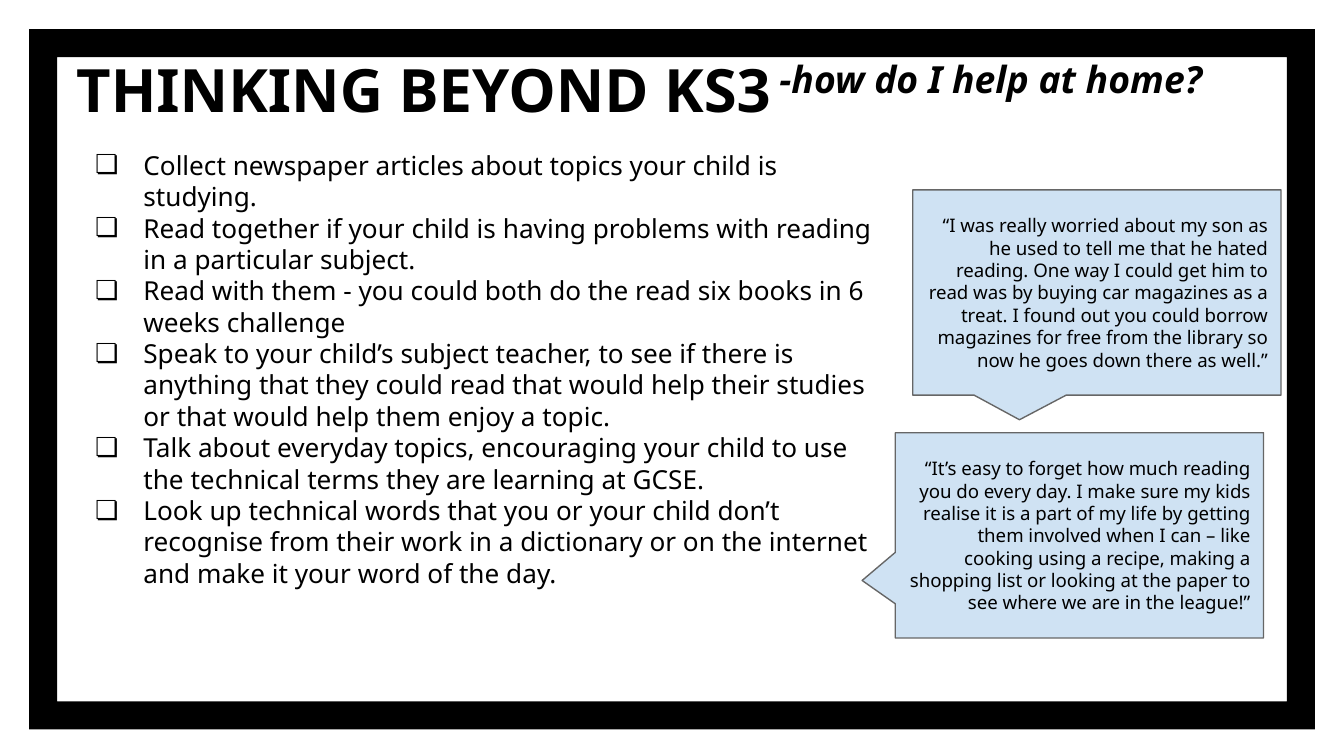
from dataclasses import dataclass

from lxml import etree
from pptx import Presentation
from pptx.dml.color import RGBColor
from pptx.enum.shapes import MSO_SHAPE
from pptx.enum.text import MSO_ANCHOR, MSO_AUTO_SIZE, PP_ALIGN
from pptx.oxml.ns import qn
from pptx.util import Cm, Pt

BLACK = RGBColor(0x00, 0x00, 0x00)
PALE_BLUE = RGBColor(0xCF, 0xE2, 0xF3)
GREY = RGBColor(0x66, 0x66, 0x66)

FRAME = MSO_SHAPE.FRAME
CALLOUT = MSO_SHAPE.ROUNDED_RECTANGULAR_CALLOUT
LEFT, RIGHT = PP_ALIGN.LEFT, PP_ALIGN.RIGHT
TOP, MIDDLE, BOTTOM = MSO_ANCHOR.TOP, MSO_ANCHOR.MIDDLE, MSO_ANCHOR.BOTTOM
NO_AUTOFIT = MSO_AUTO_SIZE.NONE

FONT = "Noto Sans"
LINE_HEIGHT = 1.2
INSET = Cm(0.25)
TWO_CONTENT_LAYOUT = 3


@dataclass
class Box:
    """Position and size in centimetres."""
    left: float
    top: float
    width: float
    height: float


@dataclass
class TextStyle:
    size: int
    align: int = LEFT
    anchor: int = TOP
    bold: bool = False
    italic: bool = False
    bullet: str = ""


@dataclass
class Quote:
    box: Box
    pointer: tuple
    words: str


TIPS = [
    "Collect newspaper articles about topics your child is studying.",
    "Read together if your child is having problems with reading in a particular subject.",
    "Read with them - you could both do the read six books in 6 weeks challenge",
    "Speak to your child’s subject teacher, to see if there is anything that they "
    "could read that would help their studies or that would help them enjoy a topic.",
    "Talk about everyday topics, encouraging your child to use the technical terms "
    "they are learning at GCSE.",
    "Look up technical words that you or your child don’t recognise from their work "
    "in a dictionary or on the internet and make it your word of the day.",
]

QUOTES = [
    Quote(Box(17.25, 3.59, 6.96, 3.88), (-0.21, 0.62),
          "“I was really worried about my son as he used to tell me that he hated "
          "reading. One way I could get him to read was by buying car magazines as a "
          "treat. I found out you could borrow magazines for free from the library so "
          "now he goes down there as well.”"),
    Quote(Box(16.92, 8.18, 6.96, 3.88), (-0.59, 0.22),
          "“It’s easy to forget how much reading you do every day. I make sure my kids "
          "realise it is a part of my life by getting them involved when I can – like "
          "cooking using a recipe, making a shopping list or looking at the paper to "
          "see where we are in the league!”"),
]


def place(shape, box: Box) -> None:
    shape.left, shape.top = Cm(box.left), Cm(box.top)
    shape.width, shape.height = Cm(box.width), Cm(box.height)


def set_bullet(paragraph, symbol: str) -> None:
    """Give the paragraph a hanging bullet, or none if the symbol is empty."""
    properties = paragraph._p.get_or_add_pPr()
    properties.set("marL", str(Cm(1.27) if symbol else 0))
    properties.set("indent", str(Cm(-0.91) if symbol else 0))
    if symbol:
        etree.SubElement(properties, qn("a:buChar"), char=symbol)
    else:
        etree.SubElement(properties, qn("a:buNone"))


def write(shape, paragraphs: list[str], style: TextStyle) -> None:
    frame = shape.text_frame
    frame.text = "\n".join(paragraphs)
    frame.word_wrap = True
    frame.auto_size = NO_AUTOFIT
    frame.vertical_anchor = style.anchor
    frame.margin_left = frame.margin_right = INSET
    frame.margin_top = frame.margin_bottom = INSET
    for paragraph in frame.paragraphs:
        paragraph.alignment = style.align
        paragraph.space_before = paragraph.space_after = Pt(0)
        paragraph.line_spacing = Pt(style.size * LINE_HEIGHT)
        set_bullet(paragraph, style.bullet)
        for run in paragraph.runs:
            run.font.name = FONT
            run.font.size = Pt(style.size)
            run.font.bold = style.bold
            run.font.italic = style.italic
            run.font.color.rgb = BLACK


def add_filled(slide, kind: int, box: Box, fill: RGBColor):
    shape = slide.shapes.add_shape(kind, 0, 0, 0, 0)
    place(shape, box)
    shape.shadow.inherit = False
    shape.fill.solid()
    shape.fill.fore_color.rgb = fill
    return shape


def add_border(slide) -> None:
    border = add_filled(slide, FRAME, Box(0.55, 0.55, 24.3, 13.24), BLACK)
    border.adjustments[0] = 0.04
    border.line.fill.background()
    # Send behind the placeholders
    border.element.getparent().insert(2, border.element)


def add_quote(slide, quote: Quote) -> None:
    callout = add_filled(slide, CALLOUT, quote.box, PALE_BLUE)
    for index, value in enumerate((*quote.pointer, 0)):
        callout.adjustments[index] = value
    callout.line.color.rgb = GREY
    callout.line.width = Pt(0.75)
    write(callout, [quote.words], TextStyle(10, RIGHT, MIDDLE))


def main() -> None:
    deck = Presentation()
    deck.slide_width, deck.slide_height = Cm(25.4), Cm(14.29)
    slide = deck.slides.add_slide(deck.slide_layouts[TWO_CONTENT_LAYOUT])
    title, tips, subtitle = slide.placeholders

    # Heading and subheading
    place(title, Box(1.19, 0.86, 18.39, 1.75))
    write(title, ["THINKING BEYOND KS3"], TextStyle(32, anchor=BOTTOM, bold=True))
    place(subtitle, Box(14.48, 0.81, 9.7, 2.16))
    write(subtitle, ["-how do I help at home?"], TextStyle(20, bold=True, italic=True))

    # Checklist of tips
    place(tips, Box(1.19, 2.57, 15.57, 10.67))
    write(tips, TIPS, TextStyle(14, bullet="❏"))

    # Border and parents' quotes
    add_border(slide)
    for quote in QUOTES:
        add_quote(slide, quote)

    deck.save("out.pptx")


if __name__ == "__main__":
    main()
